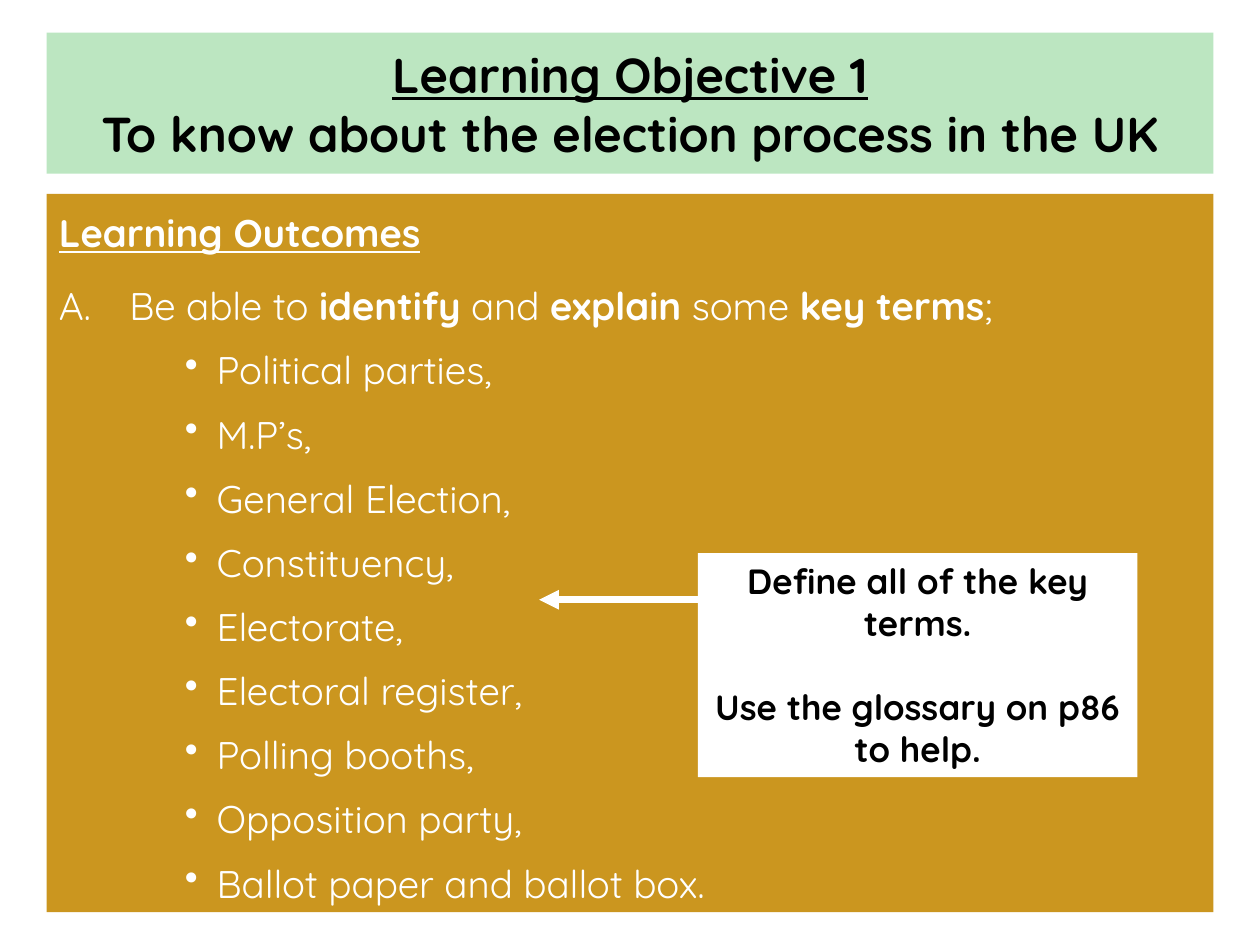
from dataclasses import dataclass

from lxml import etree
from pptx import Presentation
from pptx import util as u
from pptx.dml.color import RGBColor
from pptx.enum import shapes, text
from pptx.oxml.ns import qn

FONT = "Quicksand"
COLORS = {"mint": "B5E4BB", "ochre": "C99114", "white": "FFFFFF", "black": "000000"}
MARGIN, WIDTH = 0.94, 23.52


@dataclass
class Panel:
    left: float
    top: float
    width: float
    height: float
    fill: str
    opacity: int = 100
    anchor: text.MSO_ANCHOR = text.MSO_ANCHOR.TOP


@dataclass
class Style:
    size: int
    color: str
    align: text.PP_ALIGN = text.PP_ALIGN.LEFT
    line_spacing: float = 1.0


@dataclass
class Bullet:
    tag: str
    attrs: dict
    margin: float
    hanging: float
    level: int = 0


LETTER = Bullet("a:buAutoNum", {"type": "alphaUcPeriod"}, 1.42, 1.42)
DOT = Bullet("a:buChar", {"char": "•"}, 3.18, 0.64, level=2)

TITLE = Style(28, "black", text.PP_ALIGN.CENTER)
OUTCOME = Style(22, "white", line_spacing=1.2)
NOTE = Style(20, "black", text.PP_ALIGN.CENTER)

KEY_TERMS = [
    "Political parties,", "M.P’s,", "General Election,", "Constituency,",
    "Electorate,", "Electoral register,", "Polling booths,",
    "Opposition party,", "Ballot paper and ballot box.",
]


def add_panel(parent, panel: Panel):
    sp = parent.add_shape(
        shapes.MSO_SHAPE.RECTANGLE,
        *(u.Cm(v) for v in (panel.left, panel.top, panel.width, panel.height)))
    sp.shadow.inherit = False
    sp.line.fill.background()
    sp.fill.solid()
    sp.fill.fore_color.rgb = RGBColor.from_string(COLORS[panel.fill])
    if panel.opacity < 100:
        color = sp.fill._xPr.find(qn("a:solidFill"))[0]
        etree.SubElement(color, qn("a:alpha"), val=str(panel.opacity * 1000))
    sp.text_frame.word_wrap = True
    sp.text_frame.vertical_anchor = panel.anchor
    return sp


def add_paragraph(tf, style: Style, before: float = 0, bullet: Bullet | None = None):
    first = tf.paragraphs[0]
    p = tf.add_paragraph() if first.runs else first
    p.alignment = style.align
    p.line_spacing = style.line_spacing
    p.space_before = u.Pt(before)
    if bullet:
        p.level = bullet.level
        pPr = p._p.get_or_add_pPr()
        pPr.set("marL", str(u.Cm(bullet.margin)))
        pPr.set("indent", str(-u.Cm(bullet.hanging)))
        etree.SubElement(pPr, qn(bullet.tag), **bullet.attrs)
    return p


def add_run(p, words: str, style: Style, bold: bool = False, underline: bool = False) -> None:
    r = p.add_run()
    r.text = words
    r.font.name = FONT
    r.font.size = u.Pt(style.size)
    r.font.bold = bold
    r.font.underline = underline
    r.font.color.rgb = RGBColor.from_string(COLORS[style.color])


def add_arrow(parent, start: float, end: float, y: float) -> None:
    line = parent.add_connector(
        shapes.MSO_CONNECTOR.STRAIGHT, u.Cm(start), u.Cm(y), u.Cm(end), u.Cm(y))
    line.line.width = u.Pt(3.75)
    line.line.color.rgb = RGBColor.from_string(COLORS["white"])
    etree.SubElement(line.line._get_or_add_ln(), qn("a:tailEnd"), type="triangle")
    etree.SubElement(line._element.spPr, qn("a:effectLst"))


def main() -> None:
    prs = Presentation()
    prs.slide_width, prs.slide_height = u.Cm(25.4), u.Cm(19.05)
    s = prs.slides.add_slide(prs.slide_layouts[6])

    # Objective banner
    banner = Panel(MARGIN, 0.66, WIDTH, 2.84, "mint", 90, text.MSO_ANCHOR.MIDDLE)
    p = add_paragraph(add_panel(s.shapes, banner).text_frame, TITLE)
    add_run(p, "Learning Objective 1", TITLE, bold=True, underline=True)
    p.add_line_break()
    add_run(p, "To know about the election process in the UK", TITLE, bold=True)

    # Learning outcomes
    tf = add_panel(s.shapes, Panel(MARGIN, 3.91, WIDTH, 14.48, "ochre", 95)).text_frame
    p = add_paragraph(tf, OUTCOME)
    add_run(p, "Learning Outcomes", OUTCOME, bold=True, underline=True)
    p = add_paragraph(tf, OUTCOME, before=10, bullet=LETTER)
    parts = ["Be able to ", "identify", " and ", "explain", " some ", "key terms", ";"]
    for i, words in enumerate(parts):
        add_run(p, words, OUTCOME, bold=i % 2 == 1)
    for term in KEY_TERMS:
        add_run(add_paragraph(tf, OUTCOME, before=5, bullet=DOT), term, OUTCOME)

    # Task note with its arrow, one empty line's height between paragraphs
    group = s.shapes.add_group_shape().shapes
    tf = add_panel(group, Panel(14.07, 11.15, 8.86, 4.52, "white")).text_frame
    add_run(add_paragraph(tf, NOTE), "Define all of the key terms.", NOTE, bold=True)
    p = add_paragraph(tf, NOTE, before=24)
    add_run(p, "Use the glossary on p86 to help.", NOTE, bold=True)
    add_arrow(group, 14.45, 10.87, 12.09)

    prs.save("out.pptx")


if __name__ == "__main__":
    main()
